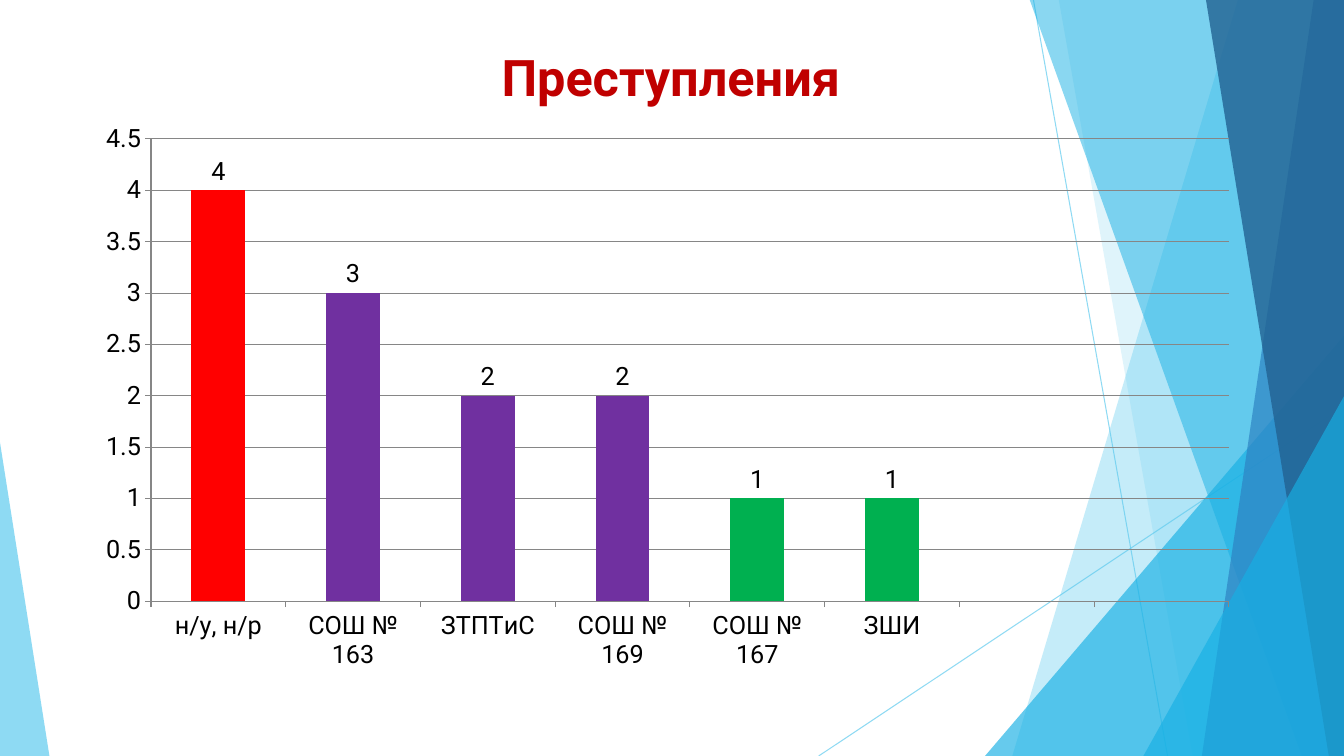
"""Build a slide with a column chart of offences by school over a faceted blue backdrop."""
from lxml.etree import SubElement
from pptx import Presentation
from pptx.chart.data import CategoryChartData
from pptx.dml.color import RGBColor
from pptx.enum.chart import XL_CHART_TYPE, XL_LABEL_POSITION, XL_TICK_MARK
from pptx.enum.shapes import MSO_CONNECTOR, MSO_SHAPE
from pptx.enum.text import MSO_ANCHOR, PP_ALIGN
from pptx.oxml.ns import qn
from pptx.util import Inches, Pt

WIDTH, HEIGHT, TOP = 13.33, 7.5, -0.01


def rgb(color):
    return RGBColor.from_string(color)


def paint(fill, color, opacity):
    fill.solid()
    fill.fore_color.rgb = rgb(color)
    for clr in fill._xPr.iter(qn("a:srgbClr")):
        SubElement(clr, qn("a:alpha"), val=str(opacity * 1000))


prs = Presentation()
prs.slide_width, prs.slide_height = Inches(WIDTH), Inches(HEIGHT)
s = prs.slides.add_slide(prs.slide_layouts[5])

for ends in [(10.25, 0, 11.58, HEIGHT), (WIDTH, 4.03, 8.12, HEIGHT)]:
    ray = s.shapes.add_connector(MSO_CONNECTOR.STRAIGHT, *map(Inches, ends))
    ray.line.width = Pt(0.75)
    paint(ray.line.fill, "5FCBEF", 70)
    SubElement(ray._element.spPr, qn("a:effectLst"))

# Bands: top x, bottom x. Triangles: left, top, width, apex.
facets = [
    ((12.28, 10.04), "5FCBEF", 36),
    ((10.5, 11.83), "5FCBEF", 20),
    ((9.77, 3.33, 3.56, 1), "17B0E4", 66),
    ((10.21, 12.91), "17B0E4", 50),
    ((13.03, 11.92), "2E83C3", 70),
    ((11.96, 13.18), "226292", 80),
    ((11.34, 3.93, 1.99, 1), "17B0E4", 66),
    ((0, 4.39, 0.49, 0), "5FCBEF", 70),
]
for geometry, color, opacity in facets:
    if len(geometry) == 2:
        top_x, bottom_x = geometry
        fb = s.shapes.build_freeform(Inches(top_x), Inches(TOP))
        corners = [(WIDTH, TOP), (WIDTH, HEIGHT), (bottom_x, HEIGHT)]
        fb.add_line_segments([(Inches(x), Inches(y)) for x, y in corners])
        sp = fb.convert_to_shape()
    else:
        left, top, width, apex = geometry
        sp = s.shapes.add_shape(MSO_SHAPE.ISOSCELES_TRIANGLE, Inches(left), Inches(top),
                                Inches(width), Inches(HEIGHT - top))
        sp.adjustments[0] = apex
    sp.shadow.inherit = False
    sp.line.fill.background()
    paint(sp.fill, color, opacity)

title = s.shapes.title
title.left, title.top = Inches(0.89), Inches(0.4)
title.width, title.height = Inches(11.53), Inches(0.71)
s.shapes.element.append(title.element)
tf = title.text_frame
tf.text = "Преступления"
tf.vertical_anchor = MSO_ANCHOR.MIDDLE
p = tf.paragraphs[0]
p.alignment = PP_ALIGN.CENTER
p.font.name, p.font.size, p.font.bold = "Roboto", Pt(36), True
p.font.color.rgb = rgb("C00000")

data = CategoryChartData()
data.categories = ["н/у, н/р", "СОШ № 163", "ЗТПТиС", "СОШ № 169", "СОШ № 167", "ЗШИ", "", ""]
data.add_series("Series 1", [4, 3, 2, 2, 1, 1, None, None])
chart = s.shapes.add_chart(XL_CHART_TYPE.COLUMN_CLUSTERED, Inches(0.82), Inches(1.12),
                           Inches(11.6), Inches(5.64), data).chart
chart.has_legend = chart.has_title = False
chart.font.name, chart.font.size = "Roboto", Pt(18)
chart.font.color.rgb = rgb("000000")

plot = chart.plots[0]
plot.gap_width = 150
plot.vary_by_categories = False
plot.has_data_labels = True
plot.data_labels.show_value = True
plot.data_labels.position = XL_LABEL_POSITION.OUTSIDE_END

series = plot.series[0]
series.format.fill.solid()
series.format.fill.fore_color.rgb = rgb("FF0000")
point_colors = ["7030A0"] * 3 + ["00B050"] * 2 + ["FFC000"] * 2
for i, color in enumerate(point_colors, 1):
    fill = series.points[i].format.fill
    fill.solid()
    fill.fore_color.rgb = rgb(color)

value_axis, category_axis = chart.value_axis, chart.category_axis
value_axis.minimum_scale, value_axis.maximum_scale, value_axis.major_unit = 0, 4.5, 0.5
value_axis.has_major_gridlines = True
for axis in (value_axis, category_axis):
    axis.major_tick_mark = XL_TICK_MARK.OUTSIDE
for part in (value_axis, category_axis, value_axis.major_gridlines):
    part.format.line.width = Pt(0.75)
    part.format.line.color.rgb = rgb("868686")

prs.save("out.pptx")
